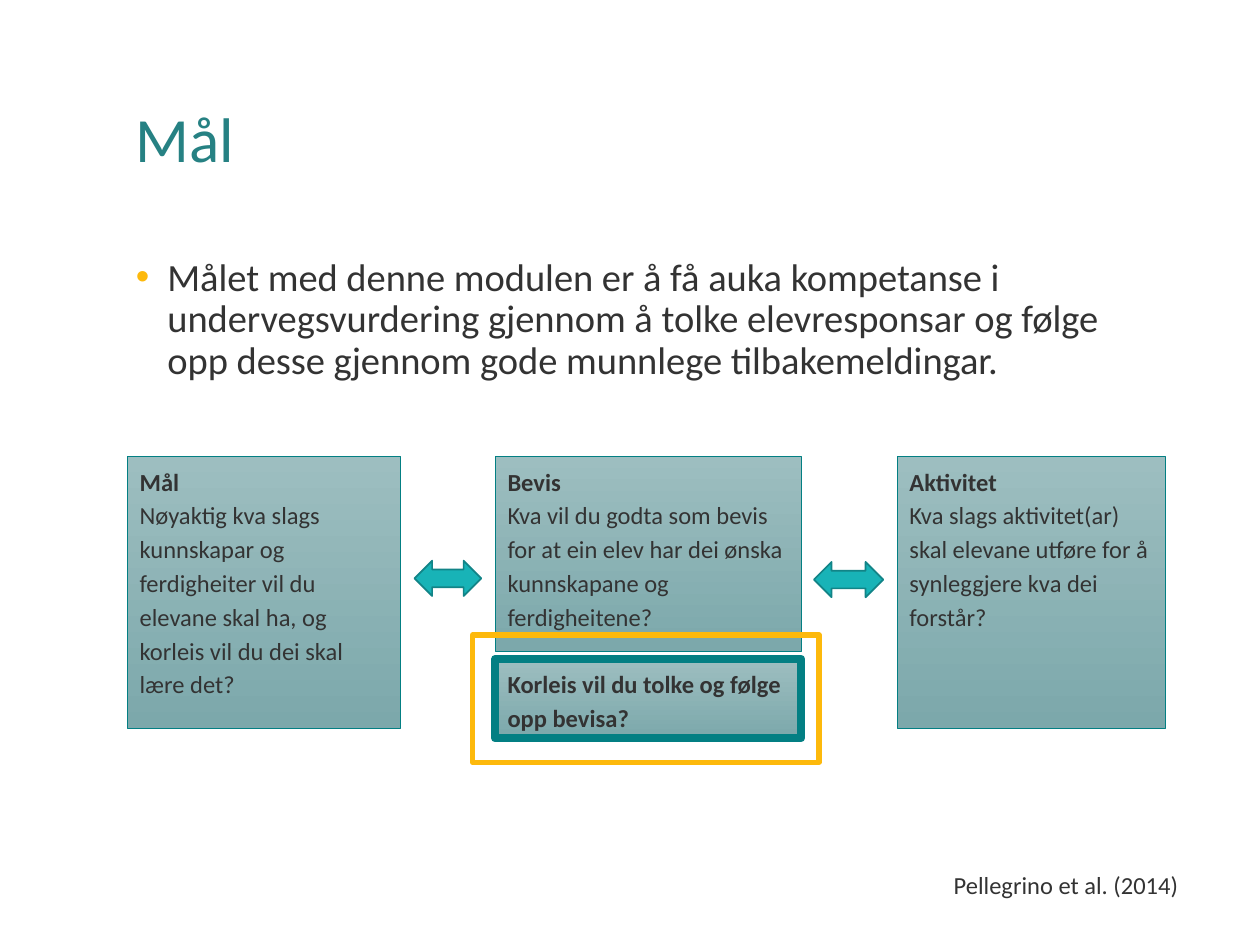
from lxml import etree
from pptx import Presentation
from pptx.dml.color import RGBColor
from pptx.enum.shapes import MSO_SHAPE as Shape
from pptx.enum.text import MSO_ANCHOR as Anchor, PP_ALIGN as Align
from pptx.oxml.ns import qn
from pptx.util import Inches, Pt

FONT = "Calibri"
TITLE_TEAL = RGBColor(0x26, 0x81, 0x83)
TEXT_GREY = RGBColor(0x33, 0x33, 0x33)
YELLOW = RGBColor(0xFD, 0xB9, 0x0C)
BOX_TOP = RGBColor(0x9D, 0xBE, 0xC0)
BOX_BOTTOM = RGBColor(0x7C, 0xA8, 0xAB)
BOX_LINE = RGBColor(0x03, 0x7F, 0x83)
ARROW_FILL = RGBColor(0x18, 0xB3, 0xB7)
ARROW_LINE = RGBColor(0x12, 0x84, 0x87)

ROW_TOP = 3.62
CARDS = [  # left, width, height, heading, question
    (1.01, 2.17, 2.16, "Mål",
     "Nøyaktig kva slags kunnskapar og ferdigheiter vil du elevane skal ha, "
     "og korleis vil du dei skal lære det?"),
    (3.93, 2.43, 1.55, "Bevis",
     "Kva vil du godta som bevis for at ein elev har dei ønska kunnskapane "
     "og ferdigheitene?"),
    (7.12, 2.13, 2.16, "Aktivitet",
     "Kva slags aktivitet(ar) skal elevane utføre for å synleggjere kva dei "
     "forstår?"),
]
ARROWS = [(3.29, 4.45, 0.53, 0.28), (6.46, 4.46, 0.55, 0.28)]


def style_para(para, size, color=TEXT_GREY, spacing=1.0, bold=False):
    para.alignment = Align.LEFT
    para.line_spacing = spacing
    for span in para.runs:
        span.font.name = FONT
        span.font.size = Pt(size)
        span.font.bold = bold
        span.font.color.rgb = color


def add_text(page, place, text, size, color=TEXT_GREY, spacing=1.0,
             anchor=Anchor.TOP):
    box = page.shapes.add_textbox(*map(Inches, place))
    frame = box.text_frame
    frame.word_wrap = True
    frame.vertical_anchor = anchor
    frame.text = text
    style_para(frame.paragraphs[0], size, color, spacing)
    return frame.paragraphs[0]


def add_bullet(para, color, indent):
    props = para._p.get_or_add_pPr()
    props.set("marL", str(indent))
    props.set("indent", str(-indent))
    bullet_color = etree.SubElement(props, qn("a:buClr"))
    etree.SubElement(bullet_color, qn("a:srgbClr"), val=str(color))
    etree.SubElement(props, qn("a:buFont"), typeface="Arial")
    etree.SubElement(props, qn("a:buChar"), char="•")


def add_outlined(page, kind, place, line_color, line_width):
    shape = page.shapes.add_shape(kind, *map(Inches, place))
    shape.shadow.inherit = False
    shape.line.color.rgb = line_color
    shape.line.width = Pt(line_width)
    return shape


def add_card(page, place, lines, line_width=0.5):
    """Gradient box; lines holds (text, bold) pairs."""
    card = add_outlined(page, Shape.RECTANGLE, place, BOX_LINE, line_width)
    card.fill.gradient()
    card.fill.gradient_angle = 270
    for stop, color in zip(card.fill.gradient_stops, (BOX_TOP, BOX_BOTTOM)):
        stop.color.rgb = color
    frame = card.text_frame
    frame.word_wrap = True
    frame.vertical_anchor = Anchor.TOP
    frame.text = "\n".join(text for text, _ in lines)
    for para, (_, bold) in zip(frame.paragraphs, lines):
        style_para(para, 14, spacing=1.15, bold=bold)


def add_arrow(page, place):
    arrow = add_outlined(page, Shape.LEFT_RIGHT_ARROW, place, ARROW_LINE, 1)
    arrow.fill.solid()
    arrow.fill.fore_color.rgb = ARROW_FILL


def main():
    deck = Presentation()
    deck.slide_width, deck.slide_height = Inches(10), Inches(7.5)
    page = deck.slides.add_slide(deck.slide_layouts[6])

    # Title and aim
    add_text(page, (0.98, 0.4, 8.29, 1.45), "Mål", 36, TITLE_TEAL, 0.9,
             Anchor.MIDDLE)
    aim = add_text(
        page, (0.98, 2, 8.29, 4.57),
        "Målet med denne modulen er å få auka kompetanse i "
        "undervegsvurdering gjennom å tolke elevresponsar og følge opp desse "
        "gjennom gode munnlege tilbakemeldingar.", 22, spacing=0.9)
    add_bullet(aim, YELLOW, Inches(0.25))

    # Cards and the arrows between them
    for left, width, height, heading, question in CARDS:
        add_card(page, (left, ROW_TOP, width, height),
                 [(heading, True), (question, False)])
    for place in ARROWS:
        add_arrow(page, place)

    # Highlighted follow-up question
    add_card(page, (3.93, 5.23, 2.43, 0.63),
             [("Korleis vil du tolke og følge opp bevisa?", True)], 4.5)
    frame = add_outlined(page, Shape.RECTANGLE, (3.75, 5.04, 2.75, 1.01),
                         YELLOW, 3)
    frame.fill.background()

    # Source
    add_text(page, (7.47, 6.86, 2.02, 0.34), "Pellegrino et al. (2014)", 14)

    deck.save("out.pptx")


if __name__ == "__main__":
    main()
